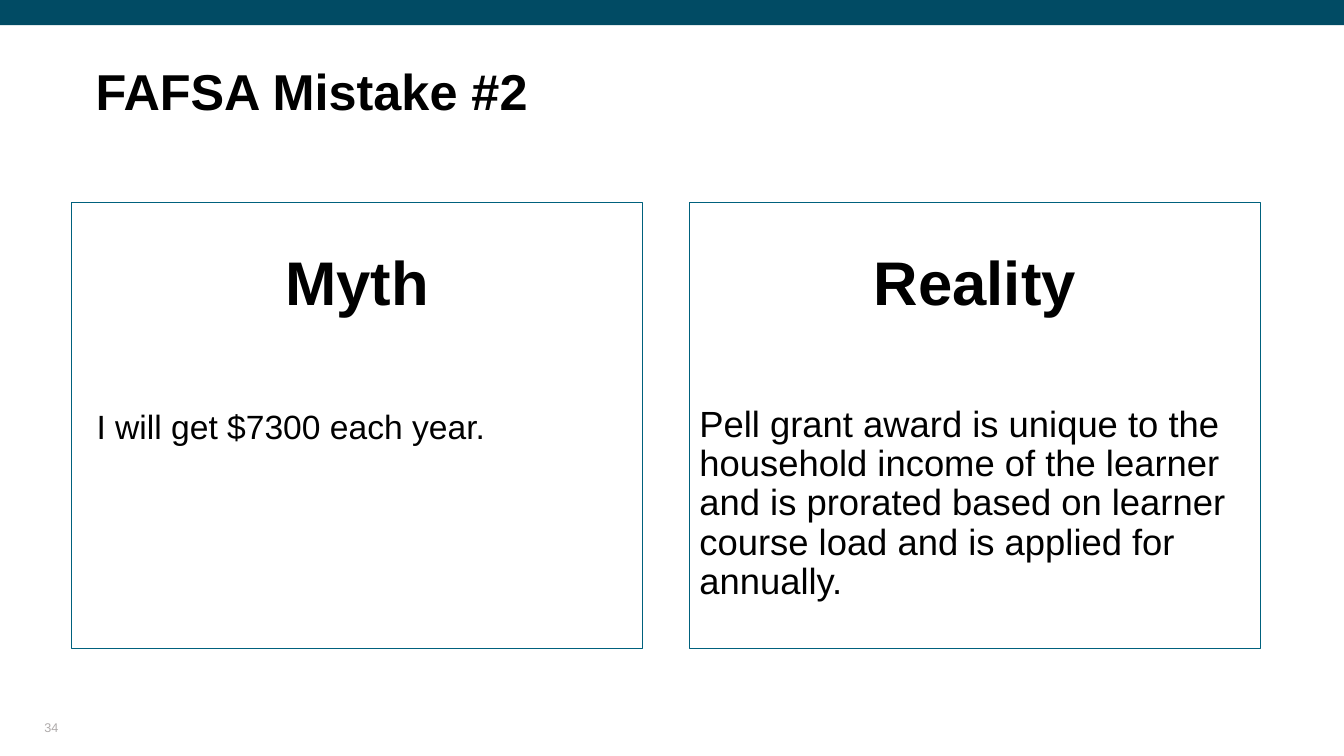
from pptx import Presentation
from pptx.dml.color import RGBColor
from pptx.enum.shapes import MSO_SHAPE
from pptx.enum.text import MSO_ANCHOR, PP_ALIGN
from pptx.util import Pt

COLORS = {"band": "014B64", "border": "00617D", "text": "000000", "number": "AFABAB"}
FONT = "Arial"
SLIDE_WIDTH, SLIDE_HEIGHT = 960, 540


def write(paragraph, text, size, color="text", bold=False,
          align=PP_ALIGN.LEFT, before=0, spacing=1.0):
    """Fill a paragraph with one formatted run."""
    paragraph.alignment = align
    paragraph.line_spacing = spacing
    paragraph.space_before = Pt(before)
    run = paragraph.add_run()
    run.text = text
    run.font.name = FONT
    run.font.size = Pt(size)
    run.font.bold = bold
    run.font.color.rgb = RGBColor.from_string(COLORS[color])


def set_frame(frame, insets, anchor=MSO_ANCHOR.TOP):
    """Wrap a text frame and set its insets (left, top, right, bottom) and anchor."""
    frame.word_wrap = True
    frame.vertical_anchor = anchor
    (frame.margin_left, frame.margin_top,
     frame.margin_right, frame.margin_bottom) = map(Pt, insets)


def add_rectangle(slide, box, fill=None, border=None):
    """Add a flat rectangle with an optional fill and border."""
    rectangle = slide.shapes.add_shape(MSO_SHAPE.RECTANGLE, *map(Pt, box))
    rectangle.shadow.inherit = False
    if fill:
        rectangle.fill.solid()
        rectangle.fill.fore_color.rgb = RGBColor.from_string(COLORS[fill])
    else:
        rectangle.fill.background()
    if border:
        rectangle.line.color.rgb = RGBColor.from_string(COLORS[border])
        rectangle.line.width = Pt(0.75)
    else:
        rectangle.line.fill.background()
    return rectangle


def add_title(slide, box, title):
    """Add the slide title."""
    frame = slide.shapes.add_textbox(*map(Pt, box)).text_frame
    set_frame(frame, (7.2, 3.6, 7.2, 3.6))
    write(frame.paragraphs[0], title, 36, bold=True)


def add_panel(slide, box, heading, statement, size, side_inset, gap):
    """Add a bordered panel with a centred heading above a statement."""
    frame = add_rectangle(slide, box, border="border").text_frame
    set_frame(frame, (side_inset, 36, side_inset, 3.6))
    write(frame.paragraphs[0], heading, 44, bold=True, align=PP_ALIGN.CENTER, spacing=0.9)
    write(frame.add_paragraph(), statement, size, before=gap, spacing=0.9)


def add_page_number(slide, box, number):
    """Add the page number at the bottom of its box."""
    frame = slide.shapes.add_textbox(*map(Pt, box)).text_frame
    set_frame(frame, (0, 0, 0, 0), MSO_ANCHOR.BOTTOM)
    write(frame.paragraphs[0], number, 9, color="number")


def add_comparison(slide, box, gutter, panels):
    """Place equal panels side by side in the given box."""
    left, top, width, height = box
    panel_width = (width - gutter * (len(panels) - 1)) / len(panels)
    for index, panel in enumerate(panels):
        panel_left = left + index * (panel_width + gutter)
        add_panel(slide, (panel_left, top, panel_width, height), **panel)


def main():
    """Build and save the slide."""
    presentation = Presentation()
    presentation.slide_width = Pt(SLIDE_WIDTH)
    presentation.slide_height = Pt(SLIDE_HEIGHT)
    slide = presentation.slides.add_slide(presentation.slide_layouts[6])

    add_rectangle(slide, (0, 0, SLIDE_WIDTH, 18), fill="band")
    add_title(slide, (61.2, 39.6, 554.4, 51), "FAFSA Mistake #2")
    add_comparison(slide, (51, 144.5, 849.5, 319), 33.5, [
        {"heading": "Myth", "statement": "I will get $7300 each year.",
         "size": 24, "side_inset": 18, "gap": 65},
        {"heading": "Reality",
         "statement": "Pell grant award is unique to the household income of the learner "
                      "and is prorated based on learner course load and is applied for annually.",
         "size": 26, "side_inset": 7.2, "gap": 62},
    ])
    add_page_number(slide, (31.7, 507.6, 216, 17.3), "34")
    presentation.save("out.pptx")


if __name__ == "__main__":
    main()
